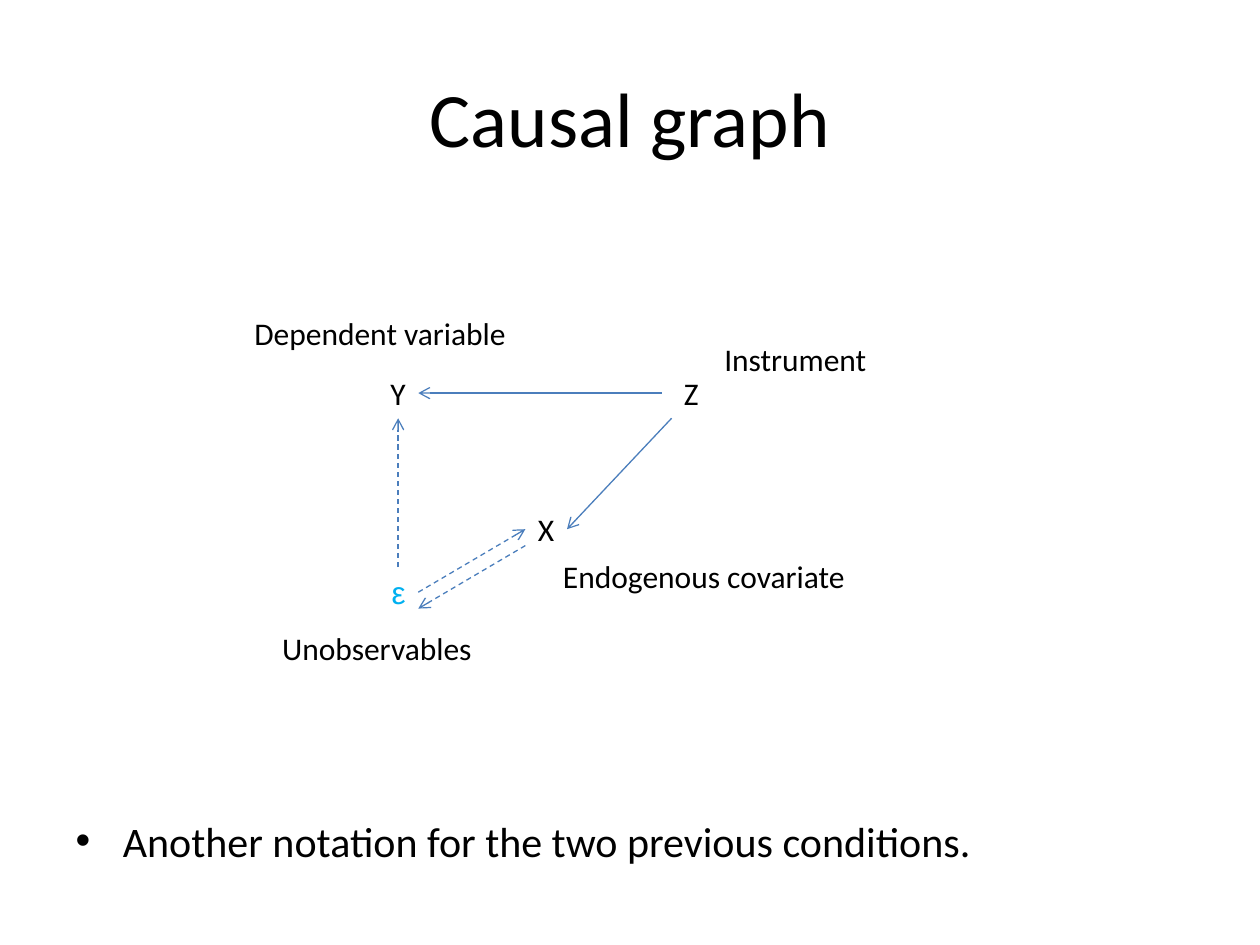
import pptx
import pptx.dml.color
import pptx.enum.dml
import pptx.enum.shapes
import pptx.enum.text
import pptx.oxml
import pptx.oxml.ns
import pptx.util
from pptx.util import Inches


def color(hex_string):
    return pptx.dml.color.RGBColor.from_string(hex_string)


def write(frame, text, size, font="Calibri", text_color="000000"):
    frame.text = text
    run = frame.paragraphs[0].runs[0]
    run.font.size = pptx.util.Pt(size)
    run.font.name = font
    run.font.color.rgb = color(text_color)


presentation = pptx.Presentation()
presentation.slide_width = Inches(10)
presentation.slide_height = Inches(7.5)
slide = presentation.slides.add_slide(presentation.slide_layouts[1])

# Title
title = slide.shapes.title
title.left, title.top = Inches(0.5), Inches(0.3)
title.width, title.height = Inches(9), Inches(1.25)
title.text_frame.vertical_anchor = pptx.enum.text.MSO_ANCHOR.MIDDLE
write(title.text_frame, "Causal graph", 44)
title.text_frame.paragraphs[0].alignment = pptx.enum.text.PP_ALIGN.CENTER

# Closing remark, bulleted by the template
remark = slide.placeholders[1]
remark.left, remark.top = Inches(0.5), Inches(6.42)
remark.width, remark.height = Inches(9), Inches(1.2)
write(remark.text_frame, "Another notation for the two previous conditions.", 24)

# Variables of the graph and their descriptions
labels = [
    ("X", 4.17, 4, 0.33, "Calibri", "000000"),
    ("Y", 3, 2.92, 0.32, "Calibri", "000000"),
    ("Z", 5.33, 2.92, 0.32, "Calibri", "000000"),
    ("ε", 3.01, 4.5, 0.31, "Arial", "00B0F0"),
    ("Dependent variable", 1.92, 2.44, 2.22, "Calibri", "000000"),
    ("Endogenous covariate", 4.37, 4.37, 2.46, "Calibri", "000000"),
    ("Instrument", 5.65, 2.65, 1.34, "Calibri", "000000"),
    ("Unobservables", 2.14, 4.94, 1.72, "Calibri", "000000"),
]
for text, left, top, width, font, text_color in labels:
    label = slide.shapes.add_textbox(Inches(left), Inches(top), Inches(width), Inches(0.4))
    label.text_frame.word_wrap = False
    label.text_frame.auto_size = pptx.enum.text.MSO_AUTO_SIZE.SHAPE_TO_FIT_TEXT
    write(label.text_frame, text, 18, font, text_color)

# Causal arrows: dashed where the unobservables take part
arrows = [
    (5.25, 3.12, 3.32, 3.12, False),  # Z to Y
    (5.33, 3.32, 4.5, 4.2, False),    # Z to X
    (3.32, 4.7, 4.17, 4.2, True),     # ε to X
    (4.17, 4.33, 3.32, 4.83, True),   # X to ε
    (3.16, 4.5, 3.16, 3.32, True),    # ε to Y
]
for x1, y1, x2, y2, dashed in arrows:
    arrow = slide.shapes.add_connector(
        pptx.enum.shapes.MSO_CONNECTOR.STRAIGHT,
        Inches(x1), Inches(y1), Inches(x2), Inches(y2))
    arrow.line.color.rgb = color("4B7EBC")
    arrow.line.width = pptx.util.Pt(0.75)
    if dashed:
        arrow.line.dash_style = pptx.enum.dml.MSO_LINE.DASH
    head = pptx.oxml.parse_xml(
        f'<a:tailEnd {pptx.oxml.ns.nsdecls("a")} type="arrow"/>')
    arrow.line._get_or_add_ln().append(head)
    no_shadow = pptx.oxml.parse_xml(f'<a:effectLst {pptx.oxml.ns.nsdecls("a")}/>')
    arrow._element.spPr.append(no_shadow)

presentation.save("out.pptx")
